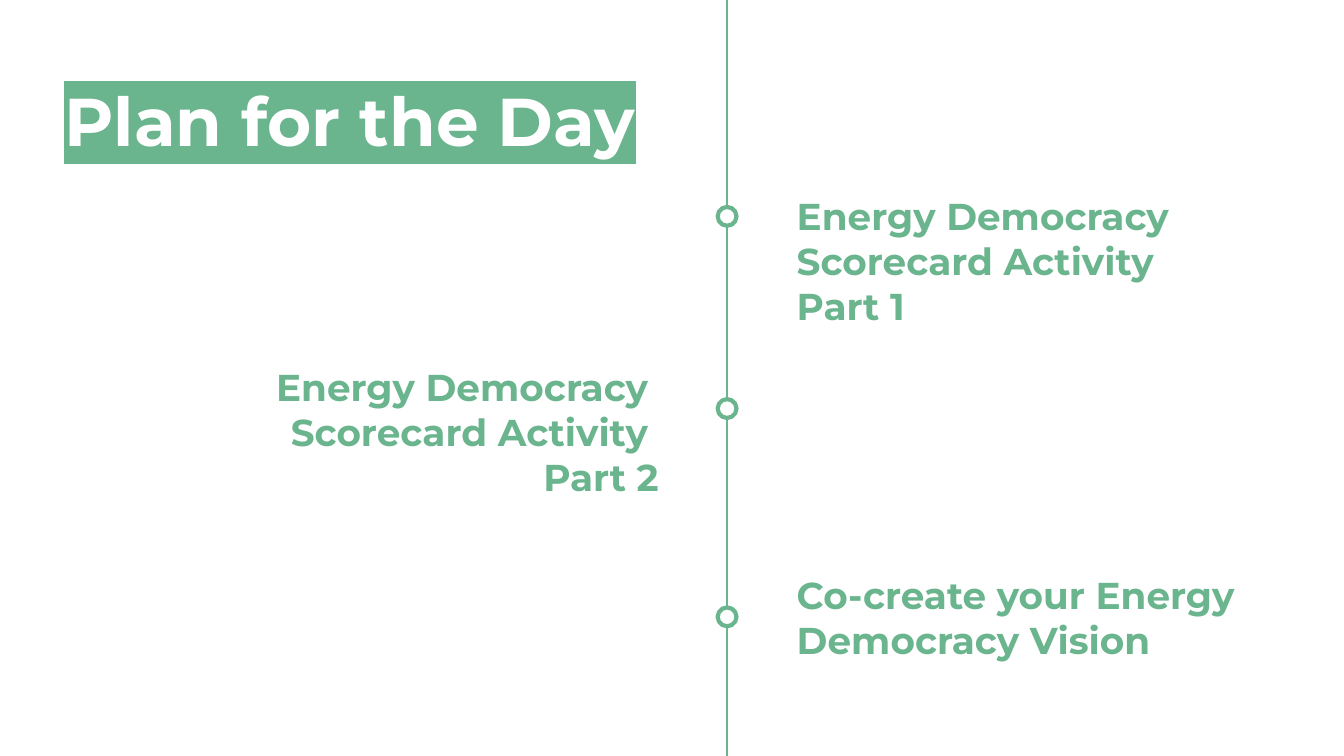
"""Build the "Plan for the Day" timeline slide."""
from lxml.etree import SubElement
from pptx import Presentation
from pptx.dml.color import RGBColor
from pptx.enum.shapes import MSO_CONNECTOR, MSO_SHAPE
from pptx.enum.text import MSO_ANCHOR, PP_ALIGN
from pptx.oxml.ns import qn
from pptx.util import Inches, Pt

GREEN = RGBColor(0x6A, 0xB4, 0x8E)
WHITE = RGBColor(0xFF, 0xFF, 0xFF)
FONT = "Montserrat"
WIDTH = 10
HEIGHT = WIDTH * 9 / 16
AXIS = 0.541 * WIDTH
DOT = 0.14
RIGHT_COLUMN = 5.83


def highlight(run, color):
    """Put a highlight colour behind a run."""
    marker = SubElement(run.font._element, qn("a:highlight"))
    SubElement(marker, qn("a:srgbClr"), val=str(color))
    run.font._element.find(qn("a:solidFill")).addnext(marker)


def add_text(slide, lines, left, top, width, height, *, size=20,
             color=GREEN, align=PP_ALIGN.LEFT, backdrop=None):
    """Add a bold text box with one paragraph per line."""
    box = slide.shapes.add_textbox(*map(Inches, (left, top, width, height)))
    frame = box.text_frame
    frame.word_wrap = True
    frame.vertical_anchor = MSO_ANCHOR.TOP
    frame.margin_left = frame.margin_right = Inches(0.1)
    frame.margin_top = frame.margin_bottom = Inches(0.1)
    for index, line in enumerate(lines):
        paragraph = frame.add_paragraph() if index else frame.paragraphs[0]
        paragraph.alignment = align
        run = paragraph.add_run()
        run.text = line
        run.font.name = FONT
        run.font.size = Pt(size)
        run.font.bold = True
        run.font.color.rgb = color
        if backdrop is not None:
            highlight(run, backdrop)


def add_axis(slide):
    """Draw the vertical timeline over the full slide height."""
    axis = slide.shapes.add_connector(
        MSO_CONNECTOR.STRAIGHT, Inches(AXIS), Inches(-0.01), Inches(AXIS), Inches(5.65))
    axis.line.color.rgb = GREEN
    axis.line.width = Pt(1.5)
    SubElement(axis._element.spPr, qn("a:effectLst"))


def add_milestone(slide, middle):
    """Draw a ring on the timeline at the given height."""
    ring = slide.shapes.add_shape(
        MSO_SHAPE.OVAL, Inches(AXIS - DOT / 2), Inches(middle - DOT / 2),
        Inches(DOT), Inches(DOT))
    ring.shadow.inherit = False
    ring.fill.solid()
    ring.fill.fore_color.rgb = WHITE
    ring.line.color.rgb = GREEN
    ring.line.width = Pt(2.25)


def main():
    """Build and save the slide."""
    deck = Presentation()
    deck.slide_width, deck.slide_height = Inches(WIDTH), Inches(HEIGHT)
    slide = deck.slides.add_slide(deck.slide_layouts[6])

    add_axis(slide)
    for middle in (1.61, 3.04, 4.59):
        add_milestone(slide, middle)

    add_text(slide, ["Plan for the Day"], 0.38, 0.49, 9.32, 0.63,
             size=36.2, color=WHITE, backdrop=GREEN)
    add_text(slide, ["Energy Democracy ", "Scorecard Activity ", "Part 2"],
             -0.29, 2.61, 5.29, 1.21, align=PP_ALIGN.RIGHT)
    add_text(slide, ["Energy Democracy Scorecard Activity", "Part 1"],
             RIGHT_COLUMN, 1.34, 3.26, 1.72)
    add_text(slide, ["Co-create your Energy", "Democracy Vision"],
             RIGHT_COLUMN, 4.16, 4.06, 0.88)

    deck.save("out.pptx")


if __name__ == "__main__":
    main()
